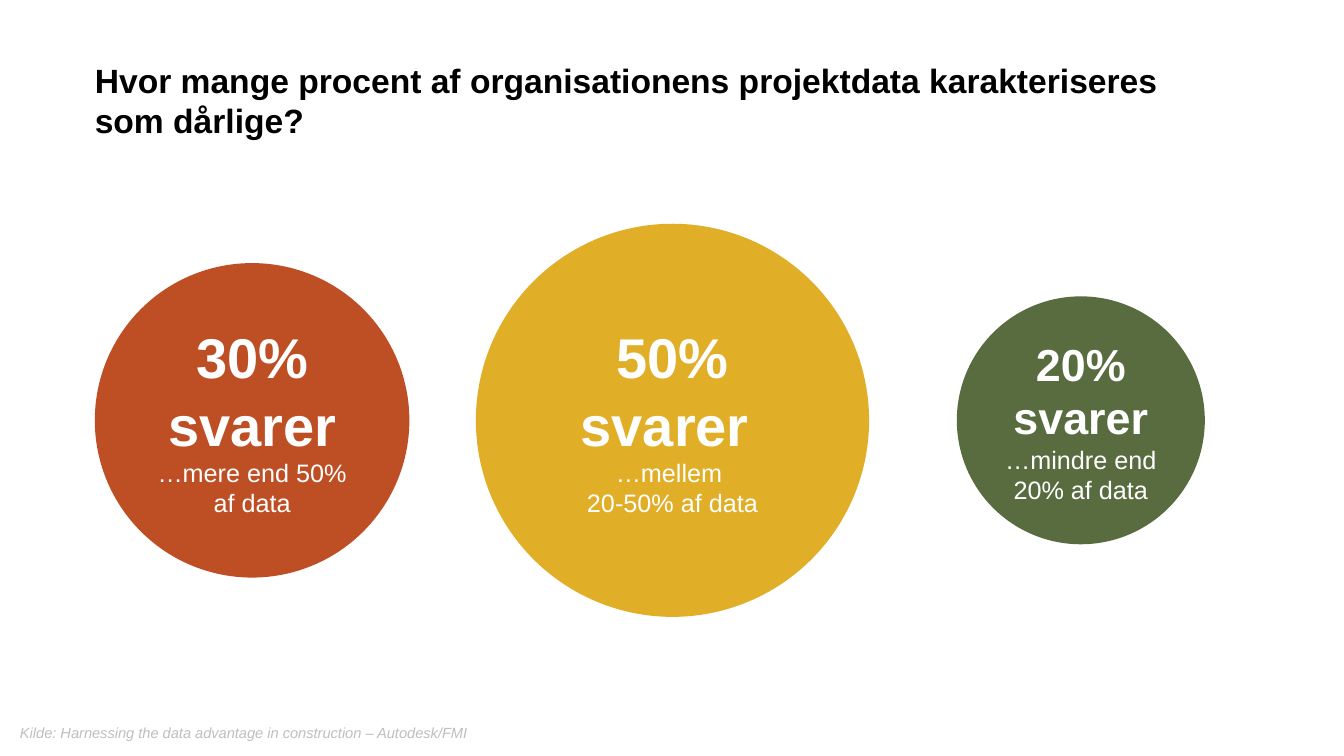
from pptx import Presentation
from pptx.dml.color import RGBColor
from pptx.enum.shapes import MSO_SHAPE
from pptx.enum.text import MSO_ANCHOR, MSO_AUTO_SIZE, PP_ALIGN
from pptx.util import Inches, Pt

BLACK = RGBColor(0x00, 0x00, 0x00)
WHITE = RGBColor(0xFF, 0xFF, 0xFF)
GREY = RGBColor(0xBF, 0xBF, 0xBF)
RUST = RGBColor(0xBE, 0x4F, 0x25)
AMBER = RGBColor(0xE1, 0xAE, 0x27)
GREEN = RGBColor(0x59, 0x6C, 0x40)

FONT = "Arial"
TITLE_LAYOUT = 5
CENTRE_LINE = 4.17
DETAIL_SIZE = 18

TITLE = "Hvor mange procent af organisationens projektdata karakteriseres som dårlige?"
SOURCE = "Kilde: Harnessing the data advantage in construction – Autodesk/FMI"

# Centre x, diameter, fill, headline size, then paragraphs of (text, is headline) spans
ANSWERS = [
    (2.5, 3.12, RUST, 40,
     [[("30% svarer ", True), ("…mere end 50% af data", False)]]),
    (6.67, 3.9, AMBER, 40,
     [[("50% svarer ", True)], [("…mellem ", False)], [("20-50% af data", False)]]),
    (10.72, 2.46, GREEN, 32,
     [[("20% svarer ", True), ("…mindre end 20% af data", False)]]),
]


def add_span(para, text, size, color, **styles):
    span = para.add_run()
    span.text = text
    span.font.color.rgb = color
    for name, value in {"name": FONT, "size": Pt(size), **styles}.items():
        setattr(span.font, name, value)


def place_title(page, left, top, width, height):
    title = page.shapes.title
    box = {"left": left, "top": top, "width": width, "height": height}
    for name, value in box.items():
        setattr(title, name, Inches(value))
    frame = title.text_frame
    settings = {"margin_left": 0, "margin_right": 0, "word_wrap": True,
                "vertical_anchor": MSO_ANCHOR.TOP, "auto_size": MSO_AUTO_SIZE.NONE}
    for name, value in settings.items():
        setattr(frame, name, value)
    para = frame.paragraphs[0]
    para.alignment = PP_ALIGN.LEFT
    add_span(para, TITLE, 24, BLACK, bold=True)


def add_answer_circle(page, centre, diameter, fill, headline_size, paragraphs):
    left, top = centre - diameter / 2, CENTRE_LINE - diameter / 2
    circle = page.shapes.add_shape(
        MSO_SHAPE.OVAL, Inches(left), Inches(top), Inches(diameter), Inches(diameter))
    circle.shadow.inherit = False
    circle.fill.solid()
    circle.fill.fore_color.rgb = fill
    circle.line.fill.background()
    frame = circle.text_frame
    frame.word_wrap = True
    frame.vertical_anchor = MSO_ANCHOR.MIDDLE
    for index, spans in enumerate(paragraphs):
        para = frame.add_paragraph() if index else frame.paragraphs[0]
        para.alignment = PP_ALIGN.CENTER
        for text, is_headline in spans:
            size = headline_size if is_headline else DETAIL_SIZE
            add_span(para, text, size, WHITE, bold=is_headline)


def add_source_line(page, left, top, width, height):
    box = page.shapes.add_textbox(
        Inches(left), Inches(top), Inches(width), Inches(height))
    box.text_frame.word_wrap = True
    add_span(box.text_frame.paragraphs[0], SOURCE, 10.5, GREY, italic=True)


def main():
    deck = Presentation()
    deck.slide_width, deck.slide_height = Inches(13.33), Inches(7.5)
    page = deck.slides.add_slide(deck.slide_layouts[TITLE_LAYOUT])
    place_title(page, 0.94, 0.54, 11.15, 1.19)
    for answer in ANSWERS:
        add_answer_circle(page, *answer)
    add_source_line(page, 0.1, 7.13, 6.23, 0.29)
    deck.save("out.pptx")


if __name__ == "__main__":
    main()
